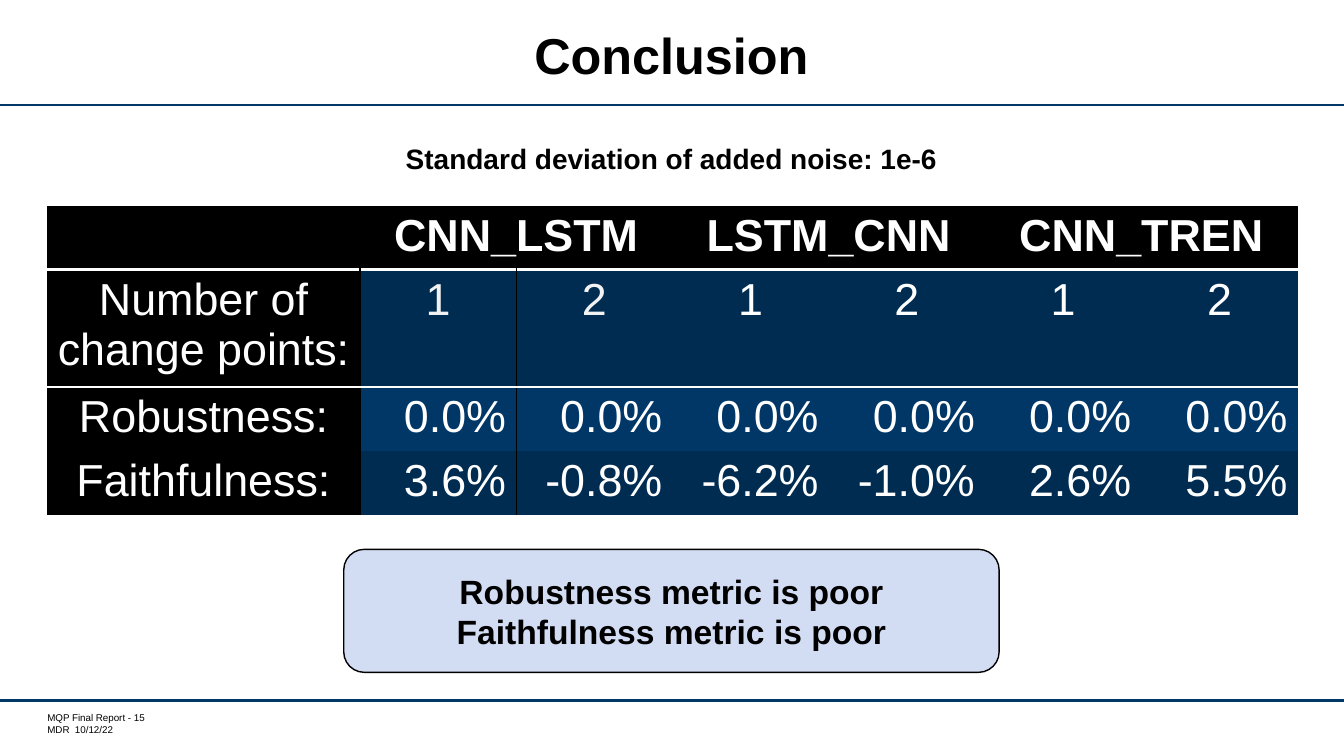
from lxml import etree
from pptx import Presentation
from pptx.dml.color import RGBColor as RGB
from pptx.enum.shapes import MSO_CONNECTOR as CONN, MSO_SHAPE as SHAPE
from pptx.enum.text import MSO_ANCHOR as ANCHOR, PP_ALIGN as AL
from pptx.oxml.ns import qn
from pptx.util import Pt

PX = 9144  # EMU per px, 100 px to the inch
W, H = 1333, 750
FONT = "Arial"
PLAIN_TABLE = "{2D5ABB26-0587-4C30-8999-92F81FD0307C}"
COLORS = {
    "black": "000000", "white": "FFFFFF", "soft": "F2F2F2",
    "navy": "003767", "dark": "002C52", "pale": "D2DCF2",
}
MODELS = ["CNN_LSTM", "LSTM_CNN", "CNN_TREN"]
METRICS = [
    ("Number of change points:", ["1", "2"] * 3, "dark", AL.CENTER),
    ("Robustness:", ["0.0%"] * 6, "navy", AL.RIGHT),
    ("Faithfulness:", ["3.6%", "-0.8%", "-6.2%", "-1.0%", "2.6%", "5.5%"],
     "dark", AL.RIGHT),
]


def px(*values):
    return [v * PX for v in values]


def color(name):
    return RGB.from_string(COLORS[name])


def write(tf, lines, size, bold=True, ink="black", align=AL.CENTER):
    tf.word_wrap = True
    for i, line in enumerate(lines):
        p = tf.paragraphs[0] if i == 0 else tf.add_paragraph()
        p.alignment = align
        r = p.add_run()
        r.text = line
        style = {"name": FONT, "size": Pt(size), "bold": bold}
        for key, value in style.items():
            setattr(r.font, key, value)
        r.font.color.rgb = color(ink)


def add_text(s, box, lines, size, **style):
    tf = s.shapes.add_textbox(*px(*box)).text_frame
    write(tf, lines, size, **style)
    return tf


def add_rule(s, y):
    line = s.shapes.add_connector(CONN.STRAIGHT, *px(0, y, W, y))
    line.line.color.rgb = color("navy")
    line.line.width = Pt(1.75)
    etree.SubElement(line._element.spPr, qn("a:effectLst"))


def add_header(s, box):
    x, y, w, h = box
    tf = add_text(s, box, ["Conclusion"], 36)
    tf.vertical_anchor = ANCHOR.MIDDLE
    tf.paragraphs[0].line_spacing = Pt(28)
    add_rule(s, y + h - 5)


def add_footer(s, box):
    x, y, w, h = box
    add_rule(s, y - 11)
    tf = add_text(s, box, ["MQP Final Report - 15", "MDR  10/12/22"], 7,
                  bold=False, align=AL.LEFT)
    for side in ("left", "top", "right", "bottom"):
        setattr(tf, f"margin_{side}", 0)


def fill_cell(cell, fill, text="", edges=(), **style):
    # Borders come before the fill in the cell properties
    tcPr = cell._tc.get_or_add_tcPr()
    for tag, ink, width in edges:
        ln = etree.SubElement(tcPr, qn(f"a:{tag}"), w=str(Pt(width)))
        solid = etree.SubElement(ln, qn("a:solidFill"))
        etree.SubElement(solid, qn("a:srgbClr"), val=COLORS[ink])
    cell.fill.solid()
    cell.fill.fore_color.rgb = color(fill)
    if text:
        write(cell.text_frame, [text], 32, **style)


def add_results(s, box):
    x, y, w, h = box
    frame = s.shapes.add_table(len(METRICS) + 1, 2 * len(MODELS) + 1,
                               *px(x, y, w, h))
    table = frame.table
    table.first_row = table.horz_banding = False
    table._tbl.tblPr.find(qn("a:tableStyleId")).text = PLAIN_TABLE

    # The label column is twice as wide, its first row twice as tall
    for i, col in enumerate(table.columns):
        col.width = (310 if i == 0 else 155) * PX
    for i, row in enumerate(table.rows):
        row.height = (110 if i == 1 else 59) * PX

    # Model names, each over two columns
    for c in range(len(table.columns)):
        text = MODELS[c // 2] if c % 2 else ""
        fill_cell(table.cell(0, c), "black", text,
                  [("lnB", "white", 2)], ink="white")
    for c in range(1, len(table.columns), 2):
        table.cell(0, c).merge(table.cell(0, c + 1))

    # Metrics
    for r, (label, values, fill, align) in enumerate(METRICS, 1):
        top = [("lnT", "white", 2)] if r == 1 else []
        fill_cell(table.cell(r, 0), "black", label,
                  [("lnR", "black", 1)] + top, bold=False, ink="white")
        for c, value in enumerate(values, 1):
            left = [("lnL", "black", 1)] if c == 1 else []
            ink = "soft" if r == 1 and c < 3 else "white"
            fill_cell(table.cell(r, c), fill, value, left + top,
                      bold=False, ink=ink, align=align)


def add_verdict(s, box):
    sp = s.shapes.add_shape(SHAPE.ROUNDED_RECTANGLE, *px(*box))
    sp.shadow.inherit = False
    sp.fill.solid()
    sp.fill.fore_color.rgb = color("pale")
    sp.line.color.rgb = color("black")
    sp.line.width = Pt(1)
    sp.text_frame.vertical_anchor = ANCHOR.MIDDLE
    write(sp.text_frame,
          ["Robustness metric is poor", "Faithfulness metric is poor"], 24)


def main():
    prs = Presentation()
    prs.slide_width, prs.slide_height = px(W, H)
    s = prs.slides.add_slide(prs.slide_layouts[6])
    add_header(s, (137, 20, 1058, 89))
    add_footer(s, (47, 706, 159, 24))
    add_results(s, (47, 204, 1239, 287))
    add_text(s, (387, 135, 558, 44),
             ["Standard deviation of added noise: 1e-6"], 20)
    add_verdict(s, (341, 545, 650, 122))
    prs.save("out.pptx")


if __name__ == "__main__":
    main()
